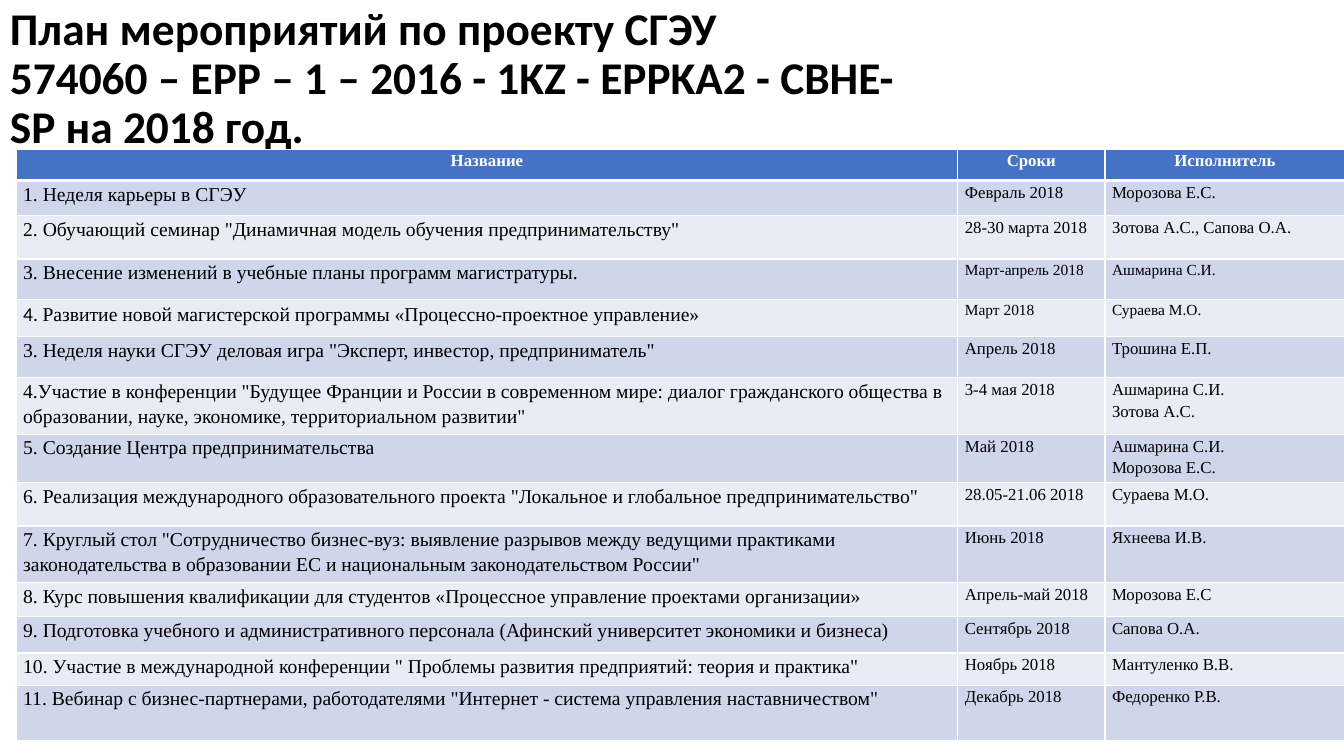
import pptx
import pptx.dml.color
import pptx.enum.text
import pptx.oxml
import pptx.oxml.ns
import pptx.util

TITLE = ["План мероприятий по проекту СГЭУ",
         "574060 – ЕРР – 1 – 2016 - 1KZ - EPPKA2 - CBHE-SP на 2018 год."]
COLUMNS = [70.07, 10.95, 17.85]
HEADER = ("Название", "Сроки", "Исполнитель")
HEADER_HEIGHT = 4.13
EVENTS = [
    (4.67, 12, "1. Неделя карьеры в СГЭУ", "Февраль 2018", "Морозова Е.С."),
    (5.73, 12, '2. Обучающий семинар "Динамичная модель обучения предпринимательству"',
     "28-30 марта 2018", "Зотова А.С., Сапова О.А."),
    (5.33, 11, "3. Внесение изменений в учебные планы программ магистратуры.",
     "Март-апрель 2018", "Ашмарина С.И."),
    (4.93, 11, [("4. ", "Calibri"),
                ("Развитие новой магистерской программы «Процессно-проектное управление»",
                 "Times New Roman")],
     "Март 2018", "Сураева М.О."),
    (5.47, 12, '3. Неделя науки СГЭУ деловая игра "Эксперт, инвестор, предприниматель"',
     "Апрель 2018", "Трошина Е.П."),
    (7.47, 12, '4.Участие в конференции "Будущее Франции и России в современном мире: '
     'диалог гражданского общества в образовании, науке, экономике, территориальном развитии"',
     "3-4 мая 2018", "Ашмарина С.И.\nЗотова А.С."),
    (6.4, 12, "5. Создание Центра предпринимательства",
     "Май 2018", "Ашмарина С.И.\nМорозова Е.С."),
    (5.73, 12, '6. Реализация международного образовательного проекта '
     '"Локальное и глобальное предпринимательство"', "28.05-21.06 2018", "Сураева М.О."),
    (7.47, 12, '7. Круглый стол "Сотрудничество бизнес-вуз: выявление разрывов между '
     'ведущими практиками законодательства в образовании ЕС и национальным '
     'законодательством России"', "Июнь 2018", "Яхнеева И.В."),
    (4.53, 12, "8. Курс повышения квалификации для студентов "
     "«Процессное управление проектами организации»", "Апрель-май 2018", "Морозова Е.С"),
    (4.8, 12, "9. Подготовка учебного и административного персонала "
     "(Афинский университет экономики и бизнеса)", "Сентябрь 2018", "Сапова О.А."),
    (4.27, 12, '10. Участие в международной конференции '
     '" Проблемы развития предприятий: теория и практика"', "Ноябрь 2018", "Мантуленко В.В."),
    (7.33, 12, '11. Вебинар с бизнес-партнерами, работодателями '
     '"Интернет - система управления наставничеством"', "Декабрь 2018", "Федоренко Р.В."),
]


def rgb(value):
    return pptx.dml.color.RGBColor.from_string(value)


class Deck:
    black, white, blue = "000000", "FFFFFF", "4472C4"
    bands = ("CFD5EA", "E9EBF5")
    heading_font, body_font = "Calibri", "Times New Roman"

    def __init__(self):
        self.prs = pptx.Presentation()
        self.prs.slide_width = pptx.util.Inches(13.33)
        self.prs.slide_height = pptx.util.Inches(7.5)
        self.s = self.prs.slides.add_slide(self.prs.slide_layouts[6])

    def x(self, columns):
        return round(self.prs.slide_width * columns / 100)

    def y(self, rows):
        return round(self.prs.slide_height * rows / 100)

    def run(self, p, text, font, size, color, bold=False):
        r = p.add_run()
        r.text = text
        r.font.name, r.font.size, r.font.bold = font, pptx.util.Pt(size), bold
        r.font.color.rgb = rgb(color)

    def title(self, lines, left, top, width, height):
        sp = self.s.shapes.add_textbox(self.x(left), self.y(top), self.x(width), self.y(height))
        tf = sp.text_frame
        tf.word_wrap = True
        tf.vertical_anchor = pptx.enum.text.MSO_ANCHOR.TOP
        tf.margin_top, tf.margin_bottom = self.y(0.8), 0
        p = tf.paragraphs[0]
        p.line_spacing = 0.9
        for i, line in enumerate(lines):
            if i:
                p.add_line_break()
            self.run(p, line, self.heading_font, 32.4, self.black, True)

    def borders(self, cell, **widths):
        tcPr = cell._tc.get_or_add_tcPr()
        for i, side in enumerate("LRTB"):
            width = pptx.util.Pt(widths.get(side, 1))
            tcPr.insert(i, pptx.oxml.parse_xml(
                f'<a:ln{side} {pptx.oxml.ns.nsdecls("a")} w="{width}">'
                f'<a:solidFill><a:srgbClr val="{self.white}"/></a:solidFill></a:ln{side}>'))

    def cell(self, cell, content, fill, size, color, header=False):
        cell.fill.solid()
        cell.fill.fore_color.rgb = rgb(fill)
        cell.margin_left = cell.margin_right = pptx.util.Inches(0.07)
        cell.margin_top = cell.margin_bottom = 0
        tf = cell.text_frame
        if isinstance(content, str):
            paragraphs = [[(line, self.body_font)] for line in content.split("\n")]
        else:
            paragraphs = [content]
        for i, runs in enumerate(paragraphs):
            p = tf.add_paragraph() if i else tf.paragraphs[0]
            p.line_spacing = 1.15
            if header:
                p.alignment = pptx.enum.text.PP_ALIGN.CENTER
            for text, font in runs:
                self.run(p, text, font, size, color, header)

    def schedule(self, left, top):
        heights = [HEADER_HEIGHT] + [event[0] for event in EVENTS]
        table = self.s.shapes.add_table(
            len(heights), len(COLUMNS), self.x(left), self.y(top),
            self.x(sum(COLUMNS)), self.y(sum(heights))).table
        for column, width in zip(table.columns, COLUMNS):
            column.width = self.x(width)
        for row, height in zip(table.rows, heights):
            row.height = self.y(height)
        for c, text in enumerate(HEADER):
            cell = table.cell(0, c)
            self.cell(cell, text, self.blue, 12, self.white, True)
            self.borders(cell, B=3)
        for i, (_, size, *contents) in enumerate(EVENTS):
            for c, content in enumerate(contents):
                cell = table.cell(i + 1, c)
                self.cell(cell, content, self.bands[i % 2], size if c else 14, self.black)
                self.borders(cell, T=1 if i else 3)


def main():
    deck = Deck()
    deck.title(TITLE, 0, 0, 69.4, 19.73)
    deck.schedule(1.2, 19.73)
    deck.prs.save("out.pptx")


if __name__ == "__main__":
    main()
